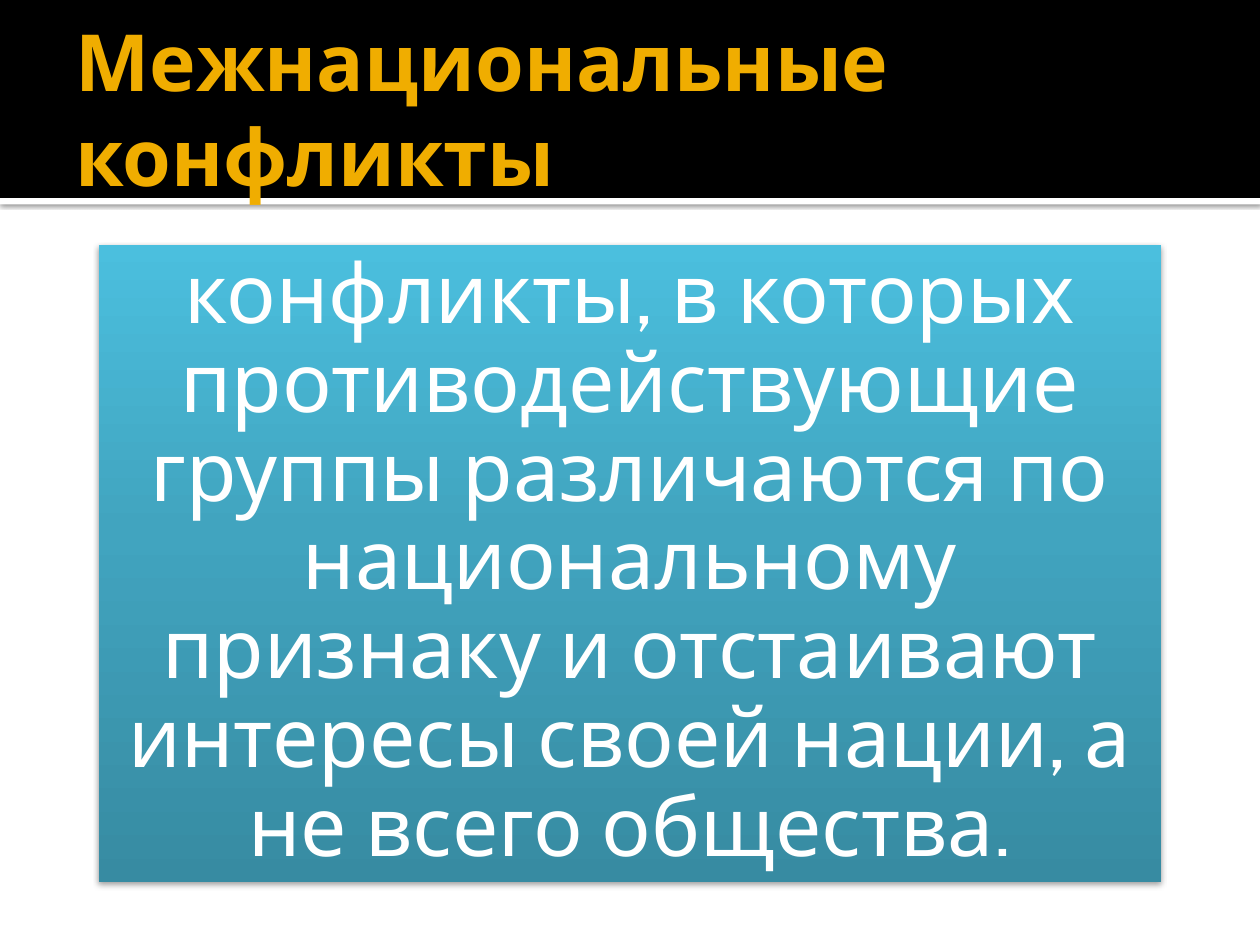
from lxml.etree import SubElement
from pptx import Presentation
from pptx.dml.color import RGBColor
from pptx.enum.shapes import MSO_SHAPE
from pptx.enum.text import MSO_ANCHOR, PP_ALIGN
from pptx.oxml.ns import qn
from pptx.util import Cm, Pt

COLOURS = {
    "white": "FFFFFF",
    "black": "000000",
    "gold": "F0AD00",
    "deep": "378BA2",
    "middle": "41A4BF",
    "light": "4BBFDE",
}
FONT = "Cabin"
PAGE_WIDTH, PAGE_HEIGHT = 25.4, 19.05
HEADER_HEIGHT = 3.99
TITLE = "Межнациональные конфликты"
DEFINITION = (
    "конфликты, в которых противодействующие группы различаются по "
    "национальному признаку и отстаивают интересы своей нации, "
    "а не всего общества."
)


def colour(name):
    """Return the named colour."""
    return RGBColor.from_string(COLOURS[name])


def add_box(page, left, top, width, height, fill=None):
    """Add a borderless rectangle, with a plain fill if one is named."""
    box = page.shapes.add_shape(
        MSO_SHAPE.RECTANGLE, Cm(left), Cm(top), Cm(width), Cm(height)
    )
    box.shadow.inherit = False
    box.line.fill.background()
    if fill:
        box.fill.solid()
        box.fill.fore_color.rgb = colour(fill)
    return box


def add_colour(parent, name, alpha=100):
    """Append a colour with an opacity in percent to an XML element."""
    node = SubElement(parent, qn("a:srgbClr"), val=COLOURS[name])
    if alpha < 100:
        SubElement(node, qn("a:alpha"), val=str(alpha * 1000))


def set_shadow(box, alpha, blur, distance):
    """Give a box a black shadow that falls straight down."""
    effects = box.element.spPr.find(qn("a:effectLst"))
    shadow = SubElement(
        effects, qn("a:outerShdw"), blurRad=str(Pt(blur)),
        dist=str(Pt(distance)), dir="5400000", rotWithShape="0",
    )
    add_colour(shadow, "black", alpha)


def set_gradient(box, stops):
    """Fill a box with a gradient that runs from bottom to top."""
    box.fill.gradient()
    box.fill.gradient_angle = 90
    stop_list = box.element.spPr.find(qn("a:gradFill")).find(qn("a:gsLst"))
    stop_list.clear()
    for position, name in stops:
        add_colour(SubElement(stop_list, qn("a:gs"), pos=str(position * 1000)), name)


def write_text(box, text, size, ink, bold=False, align=PP_ALIGN.LEFT,
               spacing=1.0, insets=(0.25, 0.13, 0.13, 0.13)):
    """Write one formatted paragraph, centred vertically in a box."""
    frame = box.text_frame
    frame.word_wrap = True
    frame.vertical_anchor = MSO_ANCHOR.MIDDLE
    (frame.margin_left, frame.margin_top,
     frame.margin_right, frame.margin_bottom) = map(Cm, insets)
    para = frame.paragraphs[0]
    para.alignment = align
    para.line_spacing = spacing
    span = para.add_run()
    span.text = text
    span.font.name = FONT
    span.font.size = Pt(size)
    span.font.bold = bold
    span.font.color.rgb = colour(ink)


def add_header(page):
    """Add the black header band, its white edge and the title."""
    edge = add_box(page, 0, HEADER_HEIGHT, PAGE_WIDTH, 0.13, "white")
    set_shadow(edge, alpha=60, blur=2.5, distance=0.8)
    add_box(page, 0, 0, PAGE_WIDTH, HEADER_HEIGHT, "black")
    title = page.shapes.add_textbox(Cm(1.27), Cm(0.43), Cm(22.86), Cm(3.48))
    write_text(title, TITLE, size=45, ink="gold", bold=True)


def add_definition(page):
    """Add the gradient panel with the definition."""
    width = 21.41
    panel = add_box(page, (PAGE_WIDTH - width) / 2, 4.93, width, 12.85)
    set_gradient(panel, [(0, "deep"), (55, "middle"), (100, "light")])
    set_shadow(panel, alpha=38, blur=3.1, distance=2)
    write_text(panel, DEFINITION, size=47, ink="white", align=PP_ALIGN.CENTER,
               spacing=0.9, insets=(0.51,) * 4)


def main():
    """Build the slide and save the deck."""
    deck = Presentation()
    deck.slide_width, deck.slide_height = Cm(PAGE_WIDTH), Cm(PAGE_HEIGHT)
    page = deck.slides.add_slide(deck.slide_layouts[6])
    add_header(page)
    add_definition(page)
    deck.save("out.pptx")


if __name__ == "__main__":
    main()
